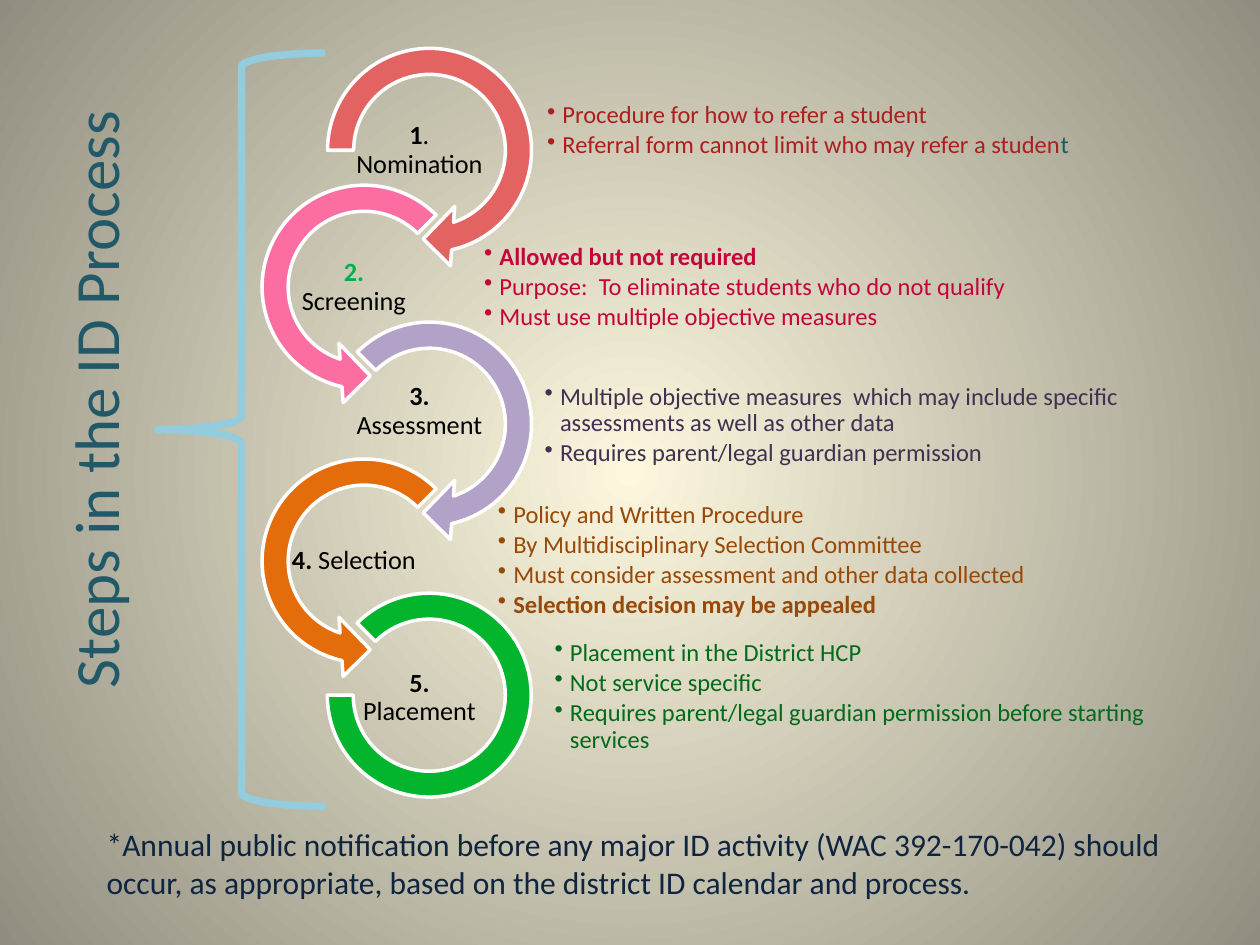
from pptx import Presentation
from pptx.dml.color import RGBColor
from pptx.enum.shapes import MSO_SHAPE as Geo
from pptx.enum.text import MSO_ANCHOR as Anchor, MSO_AUTO_SIZE as Auto, PP_ALIGN as Align
from pptx.oxml.ns import qn
from pptx.util import Cm, Pt
from lxml.etree import SubElement as Sub

TEAL, BLACK = "215968", "000000"
PITCH = 2.76  # drop from one step to the next
RIGHT = (Geo.CIRCULAR_ARROW, 6.27)
LEFT = (Geo.LEFT_CIRCULAR_ARROW, 4.95)
BOLD = {"bold": True}


def tint(code):
    return RGBColor.from_string(code)


def put(item, fmt):
    """Set each format value as an attribute of item."""
    for key, val in fmt.items():
        setattr(item, key, val)


class Deck:
    font = "Calibri"
    tight = dict.fromkeys(
        ("margin_left", "margin_top", "margin_right", "margin_bottom"), Cm(0.03))
    mid = {"vertical_anchor": Anchor.MIDDLE}
    note = {"level": 1, "line_spacing": 0.9, "space_after": Pt(2)}
    label = {"alignment": Align.CENTER, "line_spacing": 0.9, "space_after": Pt(5.25)}

    def __init__(self):
        self.prs = Presentation()
        self.prs.slide_width, self.prs.slide_height = Cm(25.4), Cm(19.05)
        self.slide = self.prs.slides.add_slide(self.prs.slide_layouts[6])

    def glow(self, inner, outer):
        """Fill the background with a gradient that spreads from the centre."""
        fill = self.slide.background.fill
        fill.gradient()
        for stop, code in zip(fill.gradient_stops, (inner, outer)):
            stop.color.rgb = tint(code)
        grad = self.slide.element.find(".//" + qn("a:gradFill"))
        grad.remove(grad.find(qn("a:lin")))
        ring = Sub(grad, qn("a:path"), path="circle")
        Sub(ring, qn("a:fillToRect"), dict.fromkeys("ltrb", "50000"))

    def shape(self, geo, box, line, width, fill=None, adj=()):
        item = self.slide.shapes.add_shape(geo, *map(Cm, box))
        item.shadow.inherit = False
        if fill:
            item.fill.solid()
            item.fill.fore_color.rgb = tint(fill)
        else:
            item.fill.background()
        item.line.color.rgb = tint(line)
        item.line.width = Pt(width)
        for i, val in enumerate(adj):
            item.adjustments[i] = val

    def text(self, box, paras, size, color, form, frame, dot=False):
        """Add a text box; each paragraph is a list of (words, format) runs."""
        item = self.slide.shapes.add_textbox(*map(Cm, box))
        body = item.text_frame
        put(body, {"word_wrap": True, **frame})
        for i, runs in enumerate(paras):
            para = body.add_paragraph() if i else body.paragraphs[0]
            put(para, form)
            for words, fmt in runs:
                run = para.add_run()
                run.text = words
                fmt = {"name": self.font, "size": Pt(size), "color": color, **fmt}
                run.font.color.rgb = tint(fmt.pop("color"))
                put(run.font, fmt)
            if dot:
                props = para._p.get_or_add_pPr()
                props.set("marL", str(Cm(0.31)))
                props.set("indent", str(-Cm(0.31)))
                Sub(props, qn("a:buChar"), char="•")
        return item

    def notes(self, box, paras, color):
        self.text(box, paras, 14, color, self.note, {**self.tight, **self.mid}, True)

    def name(self, x, y, runs):
        self.text((x, y, 2.67, 1.35), [runs], 15, BLACK, self.label,
                  {**self.tight, **self.mid})


# side, last two angles, fill, label runs, label shift, note colour, note box, notes
STEPS = [
    (RIGHT, (45, 108), "E36363", [("1", BOLD), (". Nomination", {})], 0,
     "AB1F1F", (11, 1.27, 12.7, 2.74),
     [[("Procedure for how to refer a student", {})],
      [("Referral form cannot limit who may refer a studen", {}),
       ("t", {"color": TEAL})]]),
    (LEFT, (63, 189), "FC6EA1",
     [("2. ", {**BOLD, "color": "00B050"}), ("Screening", {})], 0,
     "C3053B", (9.73, 4.6, 12.37, 2.39),
     [[("Allowed but not required", BOLD)],
      [("Purpose:  To eliminate students who do not qualify", {})],
      [("Must use multiple objective measures", {})]]),
    (RIGHT, (45, 135), "B3A2C7", [("3. ", BOLD), ("Assessment", {})], -0.26,
     "403152", (10.95, 6.99, 12.19, 3.18),
     [[("Multiple objective measures  which may include specific "
        "assessments as well as other data", {})],
      [("Requires parent/legal guardian permission", {})]]),
    (LEFT, (63, 189), "E46C0A", [("4. ", BOLD), ("Selection", {})], 0,
     "984807", (10.01, 9.96, 13.28, 2.67),
     [[("Policy and Written Procedure", {})],
      [("By Multidisciplinary Selection Committee", {})],
      [("Must consider assessment and other data collected", {})],
      [("Selection decision may be appealed", BOLD)]]),
    (RIGHT, None, "03B52D", [("5. ", BOLD), ("Placement", {})], 0,
     "026A1B", (11.15, 12.45, 12.5, 3.2),
     [[("Placement in the District HCP", {})],
      [("Not service specific", {})],
      [("Requires parent/legal guardian permission before starting services", {})]]),
]


def main():
    deck = Deck()
    deck.glow("FCF7DD", "918E81")
    for i, ((geo, x), turn, fill, runs, shift, ink, box, paras) in enumerate(STEPS):
        if turn:
            deck.shape(geo, (x, 0.64 + i * PITCH, 4.78, 4.78), "FFFFFF", 2, fill,
                       (0.11, 11.42, *turn, 0.125))
        else:
            deck.shape(Geo.BLOCK_ARC, (6.6, 11.96, 4.11, 4.11), "FFFFFF", 2, fill,
                       (135, 108, 0.127))
        deck.notes(box, paras, ink)
        deck.name(x + 0.85, 2.36 + i * PITCH + shift, runs)

    title = deck.text((-10.8, 3.61, 25.4, 8.89), [[("Steps in the ID Process", {})]],
                      36, TEAL, {"alignment": Align.CENTER}, deck.mid)
    title.rotation = 270
    deck.shape(Geo.LEFT_BRACE, (3.18, 1.07, 3.38, 15.19), "93CDDD", 4.25)
    deck.text((1.9, 16.51, 22.02, 1.8),
              [[("*Annual public notification before any major ID activity "
                 "(WAC 392-170-042) should occur, as appropriate, based on the "
                 "district ID calendar and process.", {})]],
              18, "0F243E", {}, {"auto_size": Auto.SHAPE_TO_FIT_TEXT})
    deck.prs.save("out.pptx")


if __name__ == "__main__":
    main()
